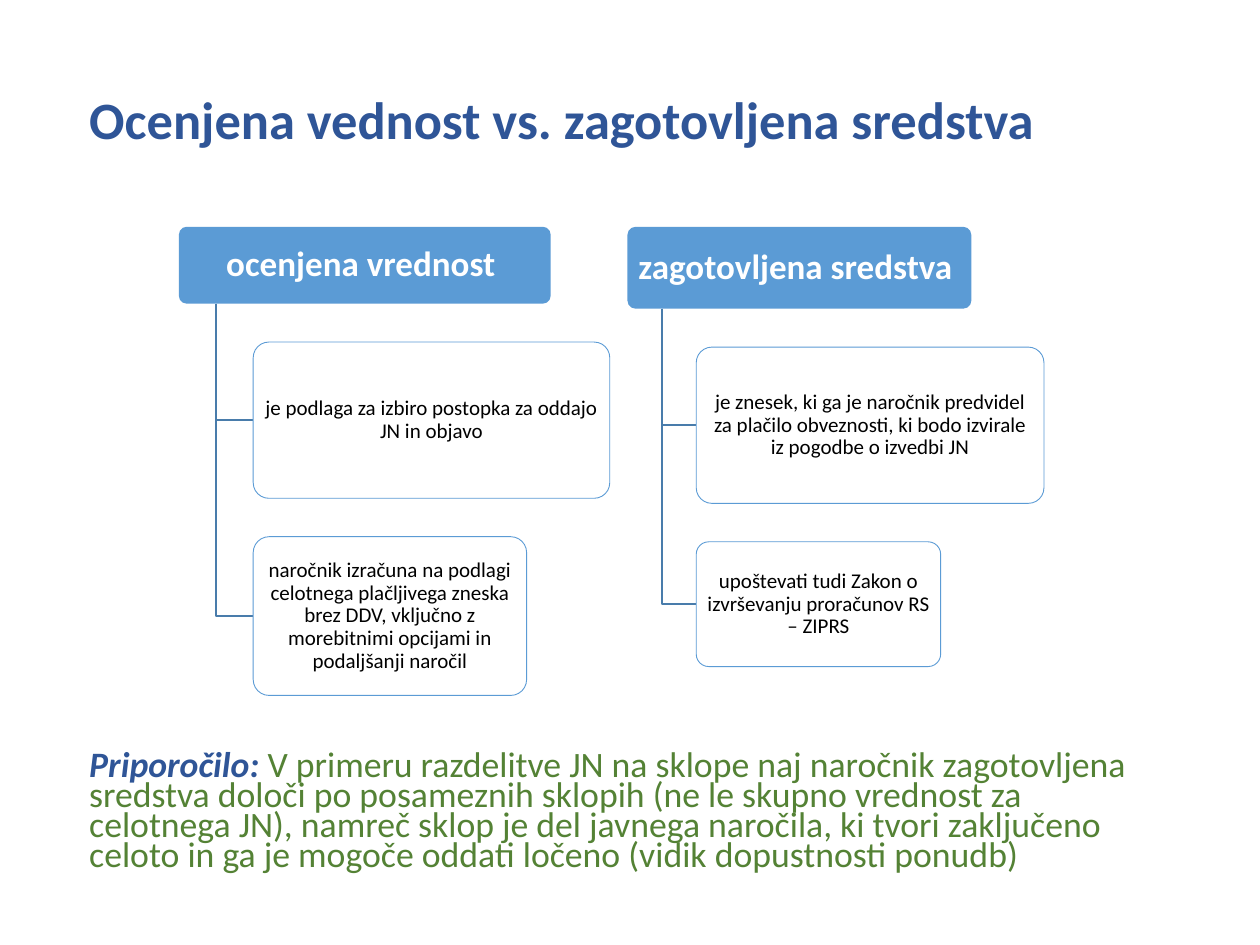
from dataclasses import dataclass

from pptx import Presentation
from pptx.dml.color import RGBColor
from pptx.enum.shapes import MSO_SHAPE
from pptx.enum.text import MSO_ANCHOR, PP_ALIGN
from pptx.util import Inches, Pt


@dataclass(frozen=True)
class Theme:
    font: str = "Calibri"
    navy: str = "2F5597"
    green: str = "548235"
    blue: str = "5B9BD5"
    line: str = "497CAB"
    white: str = "FFFFFF"
    black: str = "000000"
    title: float = 30
    note: float = 20.4
    head: float = 20
    leaf: float = 12


class Deck:
    cols, rows = 100, 75

    def __init__(self, theme):
        self.theme = theme
        self.prs = Presentation()
        self.prs.slide_width = Inches(10)
        self.prs.slide_height = Inches(7.5)
        self.slide = self.prs.slides.add_slide(self.prs.slide_layouts[6])

    def x(self, col):
        return round(self.prs.slide_width * col / self.cols)

    def y(self, row):
        return round(self.prs.slide_height * row / self.rows)

    def area(self, left, top, wide, high):
        return self.x(left), self.y(top), self.x(wide), self.y(high)

    def label(self, frame, runs, size, space, align, anchor):
        frame.word_wrap = True
        frame.vertical_anchor = anchor
        para = frame.paragraphs[0]
        para.alignment = align
        para.line_spacing = space
        for text, color, bold, slant in runs:
            run = para.add_run()
            run.text = text
            font = run.font
            font.name, font.size = self.theme.font, Pt(size)
            font.bold, font.italic = bold, slant
            font.color.rgb = RGBColor.from_string(color)

    def text(self, area, runs, size, space, anchor):
        box = self.slide.shapes.add_textbox(*self.area(*area))
        self.label(box.text_frame, runs, size, space, PP_ALIGN.LEFT, anchor)

    def card(self, area, text, size, fill, edge, color, bold):
        box = self.slide.shapes.add_shape(
            MSO_SHAPE.ROUNDED_RECTANGLE, *self.area(*area))
        box.adjustments[0] = 0.1
        box.shadow.inherit = False
        box.fill.solid()
        box.fill.fore_color.rgb = RGBColor.from_string(fill)
        if edge:
            box.line.color.rgb = RGBColor.from_string(edge)
            box.line.width = Pt(0.5)
        else:
            box.line.fill.background()
        frame = box.text_frame
        frame.margin_left = frame.margin_right = Inches(0.06)
        frame.margin_top = frame.margin_bottom = Inches(0.05)
        self.label(frame, [(text, color, bold, False)], size, 0.9,
                   PP_ALIGN.CENTER, MSO_ANCHOR.MIDDLE)

    def elbow(self, left, top, right, end):
        pen = self.slide.shapes.build_freeform(self.x(left), self.y(top))
        pen.add_line_segments(
            [(self.x(left), self.y(end)), (self.x(right), self.y(end))],
            close=False)
        bend = pen.convert_to_shape()
        bend.shadow.inherit = False
        bend.fill.background()
        bend.line.color.rgb = RGBColor.from_string(self.theme.line)
        bend.line.width = Pt(1)

    def tree(self, left, top, wide, high, head, leaves, gap=3.05):
        look = self.theme
        self.card((left, top, wide, high), head, look.head,
                  look.blue, None, look.white, True)
        base = top + high
        stem, edge = left + wide * 0.1, left + wide * 0.2
        row = base + gap
        for text, span, tall in leaves:
            self.elbow(stem, base, edge, row + tall / 2)
            self.card((edge, row, span, tall), text, look.leaf,
                      look.white, look.blue, look.black, False)
            row += tall + gap


def main():
    look = Theme()
    deck = Deck(look)
    deck.text((6.1, 3.8, 86, 11.8),
              [("Ocenjena vednost vs. zagotovljena sredstva",
                look.navy, True, False)],
              look.title, 0.9, MSO_ANCHOR.MIDDLE)
    deck.tree(14.2, 18, 29.5, 6.1, "ocenjena vrednost ", [
        ("je podlaga za izbiro postopka za oddajo JN in objavo", 28.3, 12.4),
        ("naročnik izračuna na podlagi celotnega plačljivega zneska brez DDV, "
         "vključno z morebitnimi opcijami in podaljšanji naročil", 21.7, 12.6),
    ])
    deck.tree(49.8, 18, 27.3, 6.5, "zagotovljena sredstva ", [
        ("je znesek, ki ga je naročnik predvidel za plačilo obveznosti, "
         "ki bodo izvirale iz pogodbe o izvedbi JN", 27.6, 12.4),
        ("upoštevati tudi Zakon o izvrševanju proračunov RS – ZIPRS",
         19.4, 9.9),
    ])
    deck.text((6.1, 59.3, 87.4, 10.6), [
        ("Priporočilo: ", look.navy, True, True),
        ("V primeru razdelitve JN na sklope naj naročnik zagotovljena "
         "sredstva določi po posameznih sklopih (ne le skupno vrednost za "
         "celotnega JN), namreč sklop je del javnega naročila, ki tvori "
         "zaključeno celoto in ga je mogoče oddati ločeno (vidik "
         "dopustnosti ponudb)", look.green, False, False),
    ], look.note, 0.7, MSO_ANCHOR.TOP)
    deck.prs.save("out.pptx")


if __name__ == "__main__":
    main()
